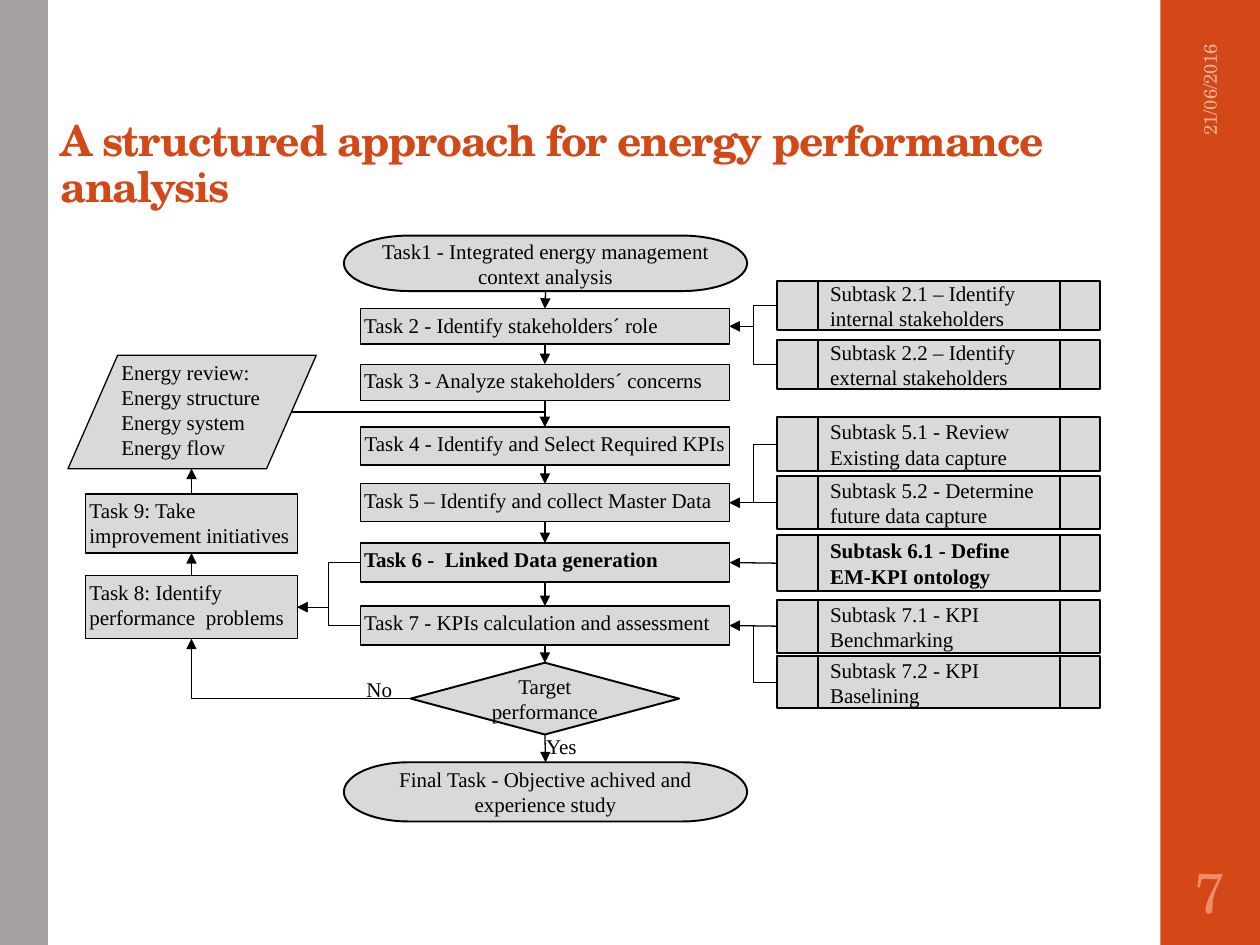
from lxml import etree
from pptx import Presentation
from pptx.dml.color import RGBColor
from pptx.enum.shapes import MSO_CONNECTOR, MSO_SHAPE
from pptx.enum.text import MSO_ANCHOR, MSO_AUTO_SIZE, PP_ALIGN
from pptx.oxml.ns import qn
from pptx.util import Inches, Pt

RECT = MSO_SHAPE.RECTANGLE
TERMINATOR = MSO_SHAPE.FLOWCHART_TERMINATOR
DECISION = MSO_SHAPE.FLOWCHART_DECISION
SUBPROCESS = MSO_SHAPE.FLOWCHART_PREDEFINED_PROCESS
DATA = MSO_SHAPE.FLOWCHART_DATA
STRAIGHT, ELBOW = MSO_CONNECTOR.STRAIGHT, MSO_CONNECTOR.ELBOW
LEFT_ALIGN, CENTER, RIGHT_ALIGN = PP_ALIGN.LEFT, PP_ALIGN.CENTER, PP_ALIGN.RIGHT
TOP_ANCHOR, MIDDLE, BOTTOM_ANCHOR = MSO_ANCHOR.TOP, MSO_ANCHOR.MIDDLE, MSO_ANCHOR.BOTTOM
TOP, LEFT, BOTTOM, RIGHT = range(4)

ORANGE = RGBColor(0xD3, 0x48, 0x17)
GRAY = RGBColor(0xA6, 0xA1, 0xA1)
LIGHT_GRAY = RGBColor(0xD9, 0xD9, 0xD9)
BLACK = RGBColor(0, 0, 0)
DATE_COLOR = RGBColor(0xF4, 0xB3, 0x9B)
NUMBER_COLOR = RGBColor(0xEF, 0x8C, 0x6A)
HEADING_FONT, BODY_FONT = "TeX Gyre Schola", "Times New Roman"
BODY = {"name": BODY_FONT, "size": Pt(12), "color": BLACK, "bold": False}
TIGHT = (0.03, 0.03)
ROOMY = (0.1, 0.05)

# Columns of the flowchart: left, width
TASKS = (2.86, 2.93)
ENDS = (2.73, 3.2)
REVIEW = (0.68, 1.68)
SUBTASKS = (6.17, 2.56)
TRUNK = TASKS[0] + TASKS[1] / 2


def write(box, text, font, align=LEFT_ALIGN, anchor=TOP_ANCHOR, insets=TIGHT):
    frame = box.text_frame
    frame.text = text
    frame.auto_size = MSO_AUTO_SIZE.NONE
    across, down = (Inches(inset) for inset in insets)
    settings = {"word_wrap": True, "vertical_anchor": anchor,
                "margin_left": across, "margin_right": across,
                "margin_top": down, "margin_bottom": down}
    for name, value in settings.items():
        setattr(frame, name, value)
    for para in frame.paragraphs:
        para.alignment = align
        for span in para.runs:
            for name, value in font.items():
                if name == "color":
                    span.font.color.rgb = value
                else:
                    setattr(span.font, name, value)


def style_line(line, arrow=True):
    """Give a connector a thin black line without shadow."""
    line.line.color.rgb = BLACK
    line.line.width = Pt(0.75)
    if arrow:
        etree.SubElement(line.line._get_or_add_ln(), qn("a:tailEnd"), type="triangle")
    etree.SubElement(line._element.spPr, qn("a:effectLst"))


deck = Presentation()
deck.slide_width, deck.slide_height = Inches(10), Inches(7.5)
page = deck.slides.add_slide(deck.slide_layouts[5])
shapes = page.shapes

# Side bars
for left, width, color in ((9.21, 0.8, ORANGE), (0, 0.38, GRAY)):
    bar = shapes.add_shape(RECT, Inches(left), 0, Inches(width), deck.slide_height)
    bar.shadow.inherit = False
    bar.fill.solid()
    bar.fill.fore_color.rgb = color
    bar.line.fill.background()

# Title
title = shapes.title
title.left, title.top = Inches(0.38), Inches(0.85)
title.width, title.height = Inches(8.97), Inches(0.88)
write(title, "A structured approach for energy performance analysis",
      {"name": HEADING_FONT, "size": Pt(24.3), "color": ORANGE, "bold": True},
      anchor=BOTTOM_ANCHOR, insets=ROOMY)
heading = title.text_frame.paragraphs[0]
heading.line_spacing = 0.9
heading.runs[0].font._element.set("spc", "-70")

# Date, page number and branch labels
labels = [
    ("21/06/2016", 8.56, 1.14, 2.08, 0.3, RIGHT_ALIGN, MIDDLE, ROOMY, 270,
     {"name": HEADING_FONT, "size": Pt(10.5), "color": DATE_COLOR}),
    ("7", 9.23, 6.75, 0.75, 0.65, CENTER, MIDDLE, (0.03, 0.05), 0,
     {"name": HEADING_FONT, "size": Pt(32), "color": NUMBER_COLOR}),
    ("Yes", 4.24, 5.79, 0.43, 0.21, CENTER, TOP_ANCHOR, TIGHT, 0, BODY),
    ("No", 2.82, 5.34, 0.38, 0.2, CENTER, TOP_ANCHOR, TIGHT, 0, BODY),
]
for text, left, top, width, height, align, anchor, insets, angle, font in labels:
    box = shapes.add_textbox(Inches(left), Inches(top), Inches(width), Inches(height))
    box.rotation = angle
    write(box, text, font, align, anchor, insets)

# Flowchart boxes: key, preset, column, top, height, text
steps = [
    ("1", TERMINATOR, ENDS, 1.87, 0.44, "Task1 - Integrated energy management context analysis"),
    ("2", RECT, TASKS, 2.45, 0.28, "Task 2 - Identify stakeholders´ role"),
    ("3", RECT, TASKS, 2.89, 0.29, "Task 3 - Analyze stakeholders´ concerns"),
    ("4", RECT, TASKS, 3.39, 0.3, "Task 4 - Identify and Select Required KPIs"),
    ("5", RECT, TASKS, 3.84, 0.3, "Task 5 – Identify and collect Master Data"),
    ("6", RECT, TASKS, 4.31, 0.31, "Task 6 -  Linked Data generation"),
    ("7", RECT, TASKS, 4.81, 0.31, "Task 7 - KPIs calculation and assessment"),
    ("target", DECISION, (3.26, 2.13), 5.26, 0.57, "Target\nperformance"),
    ("final", TERMINATOR, ENDS, 6.05, 0.47, "Final Task - Objective achived and experience study"),
    ("8", RECT, REVIEW, 4.57, 0.5, "Task 8: Identify performance  problems"),
    ("9", RECT, REVIEW, 3.92, 0.47, "Task 9: Take improvement initiatives"),
    ("review", DATA, (0.54, 1.97), 2.82, 0.9,
     "Energy review:\nEnergy structure\nEnergy system\nEnergy flow"),
    ("2.1", SUBPROCESS, SUBTASKS, 2.23, 0.39, "Subtask 2.1 – Identify internal stakeholders"),
    ("2.2", SUBPROCESS, SUBTASKS, 2.7, 0.39, "Subtask 2.2 – Identify external stakeholders"),
    ("5.1", SUBPROCESS, SUBTASKS, 3.31, 0.43, "Subtask 5.1 - Review Existing data capture"),
    ("5.2", SUBPROCESS, SUBTASKS, 3.78, 0.42, "Subtask 5.2 - Determine future data capture"),
    ("6.1", SUBPROCESS, SUBTASKS, 4.25, 0.44, "Subtask 6.1 - Define EM-KPI ontology"),
    ("7.1", SUBPROCESS, SUBTASKS, 4.76, 0.42, "Subtask 7.1 - KPI Benchmarking"),
    ("7.2", SUBPROCESS, SUBTASKS, 5.21, 0.41, "Subtask 7.2 - KPI Baselining"),
]
boxes = {}
for key, preset, (left, width), top, height, text in steps:
    box = shapes.add_shape(preset, Inches(left), Inches(top), Inches(width), Inches(height))
    box.shadow.inherit = False
    box.fill.solid()
    box.fill.fore_color.rgb = LIGHT_GRAY
    box.line.color.rgb = BLACK
    plain = preset in (RECT, DATA)
    box.line.width = Pt(0.75 if plain else 1.1)
    centered = preset in (TERMINATOR, DECISION) or key == "4"
    write(box, text, {**BODY, "bold": key in ("6", "6.1")},
          CENTER if centered else LEFT_ALIGN,
          TOP_ANCHOR if plain else MIDDLE, TIGHT if plain else ROOMY)
    boxes[key] = box

# Arrows between boxes: kind, from, side, to, side
trunk = ["1", "2", "3", "4", "5", "6", "7", "target", "final"]
links = [(STRAIGHT, start, BOTTOM, end, TOP) for start, end in zip(trunk, trunk[1:])]
links += [(STRAIGHT if key in ("5.2", "6.1", "7.1") else ELBOW, key, LEFT, key[0], RIGHT)
          for key in boxes if "." in key]
links += [(ELBOW, key, LEFT, "8", RIGHT) for key in ("6", "7")]
links += [(STRAIGHT, "8", TOP, "9", BOTTOM),
          (STRAIGHT, "9", TOP, "review", BOTTOM),
          (ELBOW, "target", LEFT, "8", BOTTOM)]
for kind, start, start_side, end, end_side in links:
    arrow = shapes.add_connector(kind, 0, 0, 0, 0)
    arrow.begin_connect(boxes[start], start_side)
    if end == "review":
        arrow.end_x, arrow.end_y = arrow.begin_x, boxes[end].top + boxes[end].height
    else:
        arrow.end_connect(boxes[end], end_side)
    if start == "target" and kind == ELBOW:
        arrow._element.spPr.find(qn("a:prstGeom")).set("prst", "bentConnector2")
    style_line(arrow)

# The energy review feeds the trunk above task 4
feed = shapes.add_connector(STRAIGHT, Inches(2.31), Inches(3.27), Inches(TRUNK), Inches(3.27))
style_line(feed, arrow=False)

deck.save("out.pptx")
